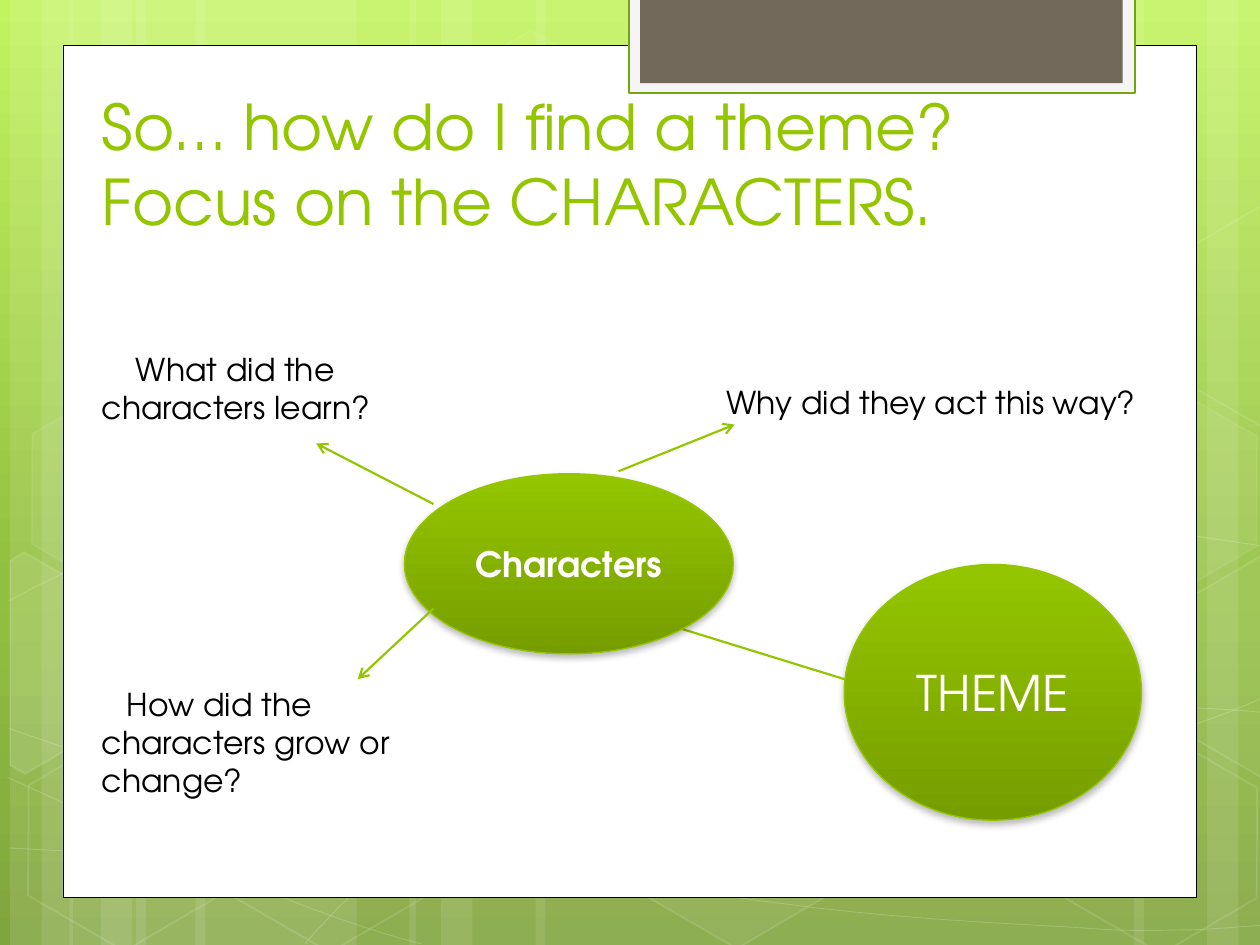
from copy import deepcopy
from math import cos, radians, sin

from lxml.etree import SubElement
from pptx import Presentation
from pptx.dml.color import RGBColor
from pptx.enum.shapes import MSO_CONNECTOR, MSO_SHAPE
from pptx.enum.text import MSO_ANCHOR as ANCHOR, PP_ALIGN as ALIGN
from pptx.oxml.ns import qn
from pptx.util import Inches, Pt

FONT = "TeX Gyre Adventor"
TILT = 30
COLORS = {
    "green": "94C600", "dark_green": "769D00", "border_green": "74A510",
    "white": "FFFFFF", "black": "000000", "pale": "F5F5F5", "taupe": "71685A",
    "sky": "C3F35F", "leaf": "93BF3F", "moss": "81A53E",
}
BANDS = [  # left, width
    (1.08, 1.75), (0.08, 0.5), (0.33, 0.83), (1.55, 1.75), (0.55, 0.5), (0.8, 0.83),
    (7.33, 1.75), (9.58, 0.5), (9, 0.83), (4.25, 3.08), (3.25, 0.5), (3.5, 0.83),
]
CURVES = [  # start point, then two control points and an end point per segment
    [(0.07, 6.73), (0.61, 6.76), (1.15, 6.79), (1.9, 6.78), (2.65, 6.77), (3.58, 6.75),
     (4.58, 6.65), (5.58, 6.55), (7, 6.36), (7.92, 6.17), (8.83, 5.98), (9.77, 5.68),
     (10.07, 5.51)],
    [(0.07, 4.77), (0.36, 4.61), (0.65, 4.46), (1.21, 4.31), (1.78, 4.16), (2.59, 3.94),
     (3.47, 3.87), (4.36, 3.8), (5.44, 3.79), (6.54, 3.87), (7.64, 3.95), (9.47, 4.26),
     (10.07, 4.34)],
    [(0.06, 6.17), (1.27, 6.72), (2.47, 7.27), (3.34, 7.49)],
    [(0.07, 5.78), (0.38, 5.89), (0.7, 6), (1.28, 6.16), (1.86, 6.31), (2.73, 6.56),
     (3.57, 6.73), (4.4, 6.9), (5.45, 7.08), (6.28, 7.18), (7.11, 7.29), (8, 7.33),
     (8.53, 7.36), (9.05, 7.4), (9.19, 7.38), (9.45, 7.38), (9.71, 7.37), (9.89, 7.35),
     (10.07, 7.34)],
    [(2.42, 7.49), (2.6, 7.29), (2.78, 7.09), (3.02, 6.91), (3.26, 6.73), (3.6, 6.53),
     (3.88, 6.39), (4.16, 6.25), (4.33, 6.19), (4.7, 6.09), (5.06, 5.99), (5.73, 5.85),
     (6.08, 5.78), (6.44, 5.71), (6.49, 5.71), (6.8, 5.69), (7.11, 5.66), (7.6, 5.63),
     (7.94, 5.62), (8.29, 5.61), (8.86, 5.62), (8.86, 5.62), (8.86, 5.62), (9.53, 5.62),
     (9.53, 5.62), (9.71, 5.63), (9.88, 5.64), (9.97, 5.65), (10.06, 5.66), (10.03, 5.65),
     (10.06, 5.66)],
]
HEXAGONS = [  # left, top, fill opacity, line opacity
    (3.34, 0.36, 4, 8), (4.97, 5.89, 6, 12), (0.11, 5.91, 0, 12), (0.14, 3.12, 7, 8),
    (1.74, 5.92, 0, 12), (7.53, 4.53, 10, 12), (8.34, 5.93, 0, 12), (8.34, 3.14, 7, 8),
]
CUT_HEXAGONS = [  # centre, corners as they stand after the tilt, fill opacity
    ((0.36, 5.35), [(0.08, 4.45), (0.19, 4.38), (0.96, 4.82), (0.95, 5.7), (0.2, 6.14),
                    (0.08, 6.07)], 10),
    ((9.85, 5.2), [(9.26, 4.85), (10.01, 4.41), (10.09, 4.46), (10.09, 6.13),
                   (10.02, 6.17), (9.26, 5.73)], 4),
    ((9.85, 2.41), [(9.26, 2.07), (10.01, 1.63), (10.1, 1.68), (10.09, 3.35),
                    (10.02, 3.39), (9.26, 2.95)], 0),
]


def color(name):
    return RGBColor.from_string(COLORS[name])


def set_paint(fill, name, opacity, holder):
    """Give a solid fill; holder is the XML element that contains it."""
    if not opacity:
        fill.background()
        return
    fill.solid()
    fill.fore_color.rgb = color(name)
    if opacity < 100:
        srgb = holder.find(qn("a:solidFill")).find(qn("a:srgbClr"))
        SubElement(srgb, qn("a:alpha"), val=str(opacity * 1000))


def style(shape, fill=None, fill_opacity=100, line=None, line_opacity=100, width=1):
    shape.shadow.inherit = False
    props = shape._element.spPr
    set_paint(shape.fill, fill, fill_opacity if fill else 0, props)
    set_paint(shape.line.fill, line, line_opacity if line else 0, props.find(qn("a:ln")))
    if line:
        shape.line.width = Pt(width)


def set_gradient(fill, holder, stops):
    """Run the (position, colour) stops from top to bottom."""
    fill.gradient()
    fill.gradient_angle = 270
    stop_list = next(holder.iter(qn("a:gsLst")))
    while len(stop_list) < len(stops):
        stop_list.append(deepcopy(stop_list[-1]))
    for stop, (position, name) in zip(fill.gradient_stops, stops):
        stop.position = position
        stop.color.rgb = color(name)


def add_preset(page, kind, box):
    return page.shapes.add_shape(kind, *map(Inches, box))


def add_outline(page, points, close):
    corners = [(Inches(x), Inches(y)) for x, y in points]
    builder = page.shapes.build_freeform(*corners[0])
    builder.add_line_segments(corners[1:], close=close)
    return builder.convert_to_shape()


def add_curve(page, points):
    """Draw an outline whose points are then read as Bezier segments."""
    curve = add_outline(page, points, close=False)
    track = next(curve._element.iter(qn("a:path")))
    lines = track.findall(qn("a:lnTo"))
    for start in range(0, len(lines), 3):
        segment = SubElement(track, qn("a:cubicBezTo"))
        for line in lines[start:start + 3]:
            segment.append(line[0])
            track.remove(line)
    return curve


def add_tilted_outline(page, center, corners):
    """Draw corners level about the centre, then tilt the shape into place."""
    c, s = cos(radians(TILT)), sin(radians(TILT))
    offsets = [(x - center[0], y - center[1]) for x, y in corners]
    level = [(center[0] + x * c + y * s, center[1] - x * s + y * c) for x, y in offsets]
    outline = add_outline(page, level, close=True)
    outline.rotation = TILT
    return outline


def add_backdrop(page):
    set_gradient(page.background.fill, page._element,
                 [(0, "sky"), (0.62, "leaf"), (1, "moss")])
    for left, width in BANDS:
        style(add_preset(page, MSO_SHAPE.RECTANGLE, (left, 0, width, 7.5)), "white", 10)
    for points in CURVES:
        style(add_curve(page, points), line="white", line_opacity=20, width=0.5)
    for left, top, fill_opacity, line_opacity in HEXAGONS:
        hexagon = add_preset(page, MSO_SHAPE.HEXAGON, (left, top, 1.75, 1.52))
        hexagon.adjustments[0] = 0.285
        hexagon.rotation = TILT
        style(hexagon, "white", fill_opacity, "white", line_opacity)
    for center, corners, opacity in CUT_HEXAGONS:
        style(add_tilted_outline(page, center, corners), "white", opacity, "white", 12)


def add_panel(page, box):
    """Place the white sheet with the tab that hangs over its top edge."""
    left = box[0]
    style(add_preset(page, MSO_SHAPE.RECTANGLE, box), "white", line="black", width=0.5)
    tab = add_preset(page, MSO_SHAPE.RECTANGLE, (left + 4.49, -0.02, 4.02, 0.76))
    style(tab, "pale", line="border_green", width=1.25)
    style(add_preset(page, MSO_SHAPE.RECTANGLE, (left + 4.58, -0.02, 3.83, 0.68)), "taupe")


def write(shape, text, size, name, anchor, align=ALIGN.LEFT, bold=False, indent=0):
    frame = shape.text_frame
    frame.text = text
    frame.word_wrap = True
    frame.vertical_anchor = anchor
    para = frame.paragraphs[0]
    para.alignment = align
    if indent:
        para._p.get_or_add_pPr().set("indent", str(Inches(indent)))
    for span in para.runs:
        span.font.name = FONT
        span.font.size = Pt(size)
        span.font.bold = bold
        span.font.color.rgb = color(name)


def add_label(page, box, text, size=18, name="black", anchor=ANCHOR.TOP, indent=0):
    label = page.shapes.add_textbox(*map(Inches, box))
    write(label, text, size, name, anchor, indent=indent)


def add_bubble(page, box, text, size, bold=False):
    bubble = add_preset(page, MSO_SHAPE.OVAL, box)
    style(bubble, line="green", width=0.75)
    props = bubble._element.spPr
    set_gradient(bubble.fill, props, [(0, "green"), (1, "dark_green")])
    shadow = SubElement(props.find(qn("a:effectLst")), qn("a:outerShdw"),
                        blurRad=str(Pt(4)), dist=str(Pt(2)), dir="5400000", rotWithShape="0")
    shade = SubElement(shadow, qn("a:srgbClr"), val=COLORS["black"])
    SubElement(shade, qn("a:alpha"), val="28000")
    write(bubble, text, size, "white", ANCHOR.MIDDLE, ALIGN.CENTER, bold)


def add_link(page, start, end, arrow=True):
    link = page.shapes.add_connector(MSO_CONNECTOR.STRAIGHT, *map(Inches, start + end))
    link.line.color.rgb = color("green")
    link.line.width = Pt(1.25)
    props = link._element.spPr
    if arrow:
        SubElement(props.find(qn("a:ln")), qn("a:tailEnd"), type="arrow")
    SubElement(props, qn("a:effectLst"))


def add_mind_map(page, box):
    """Place the two bubbles, their links and the questions around them."""
    left, top = box

    def at(x, y, *extent):
        return (left + x, top + y, *extent)

    add_bubble(page, at(6, 1.75, 2.36, 2.03), "THEME", 28)
    add_link(page, at(6, 2.66), at(4.19, 2.1), arrow=False)
    add_bubble(page, at(2.51, 1.03, 2.61, 1.43), "Characters", 20, bold=True)
    for start, end in [((2.74, 1.27), (1.81, 0.79)), ((2.74, 2.1), (2.14, 2.66)),
                       ((4.21, 1.01), (5.13, 0.64))]:
        add_link(page, at(*start), at(*end))
    add_label(page, at(0.01, 0, 2.74, 1.01), "What did the characters learn?", indent=0.27)
    add_label(page, at(0.01, 2.66, 2.74, 2.52), "How did the characters grow or change?",
              indent=0.2)
    add_label(page, at(4.9, 0.26, 3.56, 0.71), "Why did they act this way?", indent=0.07)


def main():
    deck = Presentation()
    deck.slide_width, deck.slide_height = Inches(10), Inches(7.5)
    page = deck.slides.add_slide(deck.slide_layouts[6])
    add_backdrop(page)
    add_panel(page, (0.5, 0.36, 9, 6.76))
    add_label(page, (0.71, 0.69, 8.12, 1.25),
              "So… how do I find a theme?\vFocus on the CHARACTERS.", 36, "green", ANCHOR.BOTTOM)
    add_mind_map(page, (0.7, 2.73))
    deck.save("out.pptx")


if __name__ == "__main__":
    main()
